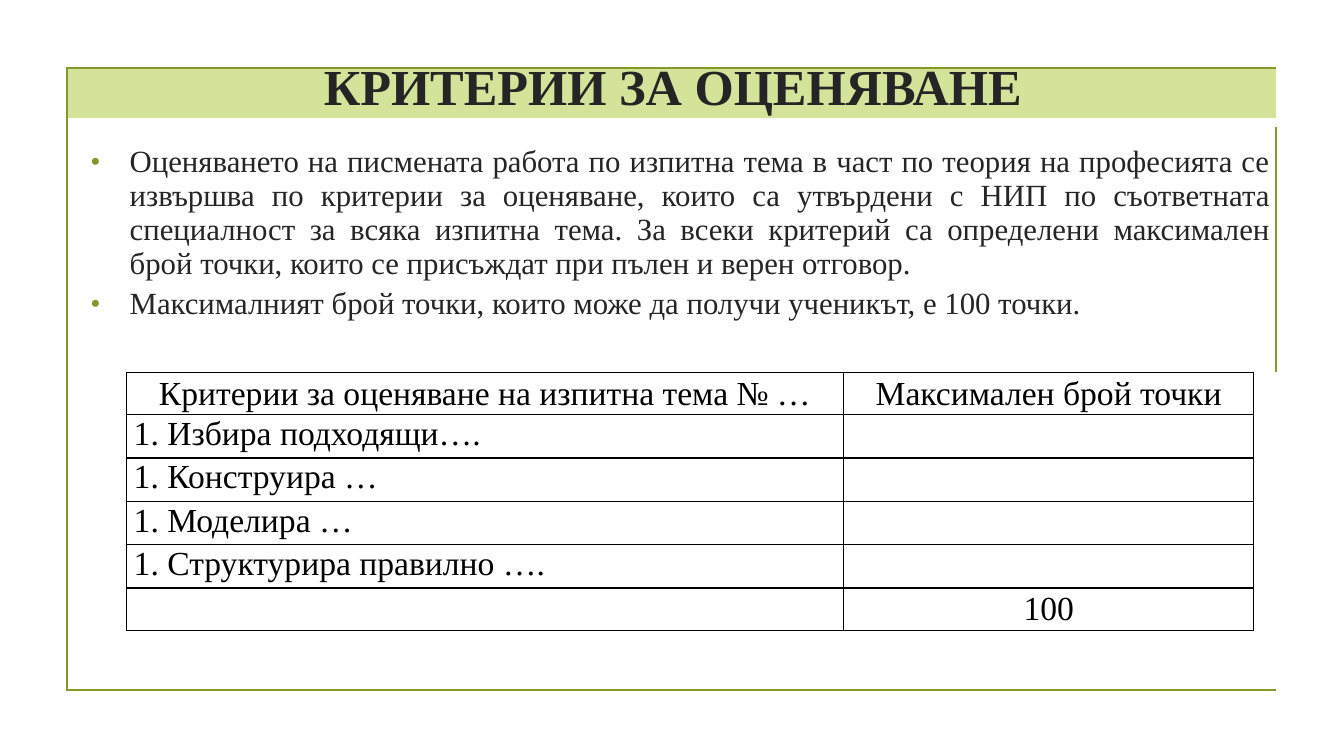
from lxml.etree import SubElement
from pptx import Presentation
from pptx.dml.color import RGBColor
from pptx.enum.text import PP_ALIGN
from pptx.oxml.ns import qn
from pptx.util import Inches, Pt

SLIDE_W, SLIDE_H = Inches(13.33), Inches(7.5)
FRAME_LEFT, FRAME_TOP, FRAME_W, FRAME_H = 0.05, 0.09, 0.9, 0.82
COLUMNS = [0.59, 7.11, 4.07, 0.16, 0.06]
ROWS = [0.5, 0.08, 2.07, 0.37, 0.42, 0.43, 0.43, 0.43, 0.43, 0.42, 0.59]
LAST_ROW, LAST_COLUMN = len(ROWS) - 1, len(COLUMNS) - 1
GRID_ROWS, GRID_COLUMNS = range(4, 10), range(1, 3)
MERGES = [
    ((0, 0), (0, 4)), ((1, 0), (1, 4)), ((2, 0), (2, 3)), ((3, 0), (3, 3)),
    ((4, 0), (9, 0)), ((4, 3), (9, 4)), ((10, 0), (10, 4)),
]
FONT = "Times New Roman"
NO_STYLE = "{2D5ABB26-0587-4C30-8999-92F81FD0307C}"
OLIVE = RGBColor(0x83, 0x99, 0x2A)
LIME = RGBColor(0xD4, 0xE3, 0x9A)
CHARCOAL = RGBColor(0x25, 0x25, 0x25)
BLACK = RGBColor(0, 0, 0)
WHITE = RGBColor(0xFF, 0xFF, 0xFF)

TITLE = "КРИТЕРИИ ЗА ОЦЕНЯВАНЕ"
RULES = [
    "Оценяването на писмената работа по изпитна тема в част по теория на професията се "
    "извършва по критерии за оценяване, които са утвърдени с НИП по съответната "
    "специалност за всяка изпитна тема. За всеки критерий са определени максимален "
    "брой точки, които се присъждат при пълен и верен отговор.",
    "Максималният брой точки, които може да получи ученикът, е 100 точки.",
]
HEADINGS = ["Критерии за оценяване на изпитна тема № …", "Максимален брой точки"]
CRITERIA = [
    "1. Избира подходящи….", "1. Конструира …",
    "1. Моделира …", "1. Структурира правилно ….",
]
TOTAL = "100"


def format_paragraph(paragraph, size, color, bold=False, align=PP_ALIGN.LEFT,
                     line=None, before=None, indent=0, hanging=0):
    paragraph.alignment = align
    if line:
        paragraph.line_spacing = Pt(line)
    if before:
        paragraph.space_before = Pt(before)
    properties = paragraph._p.get_or_add_pPr()
    properties.set("marL", str(Inches(indent)))
    properties.set("indent", str(-Inches(hanging)))
    for run in paragraph.runs:
        run.font.name, run.font.size = FONT, Pt(size)
        run.font.bold, run.font.color.rgb = bold, color


def add_bullet(paragraph):
    properties = paragraph._p.get_or_add_pPr()
    color = SubElement(properties, qn("a:buClr"))
    SubElement(color, qn("a:srgbClr"), val=str(OLIVE))
    SubElement(properties, qn("a:buSzPct"), val="95000")
    SubElement(properties, qn("a:buFont"), typeface=FONT)
    SubElement(properties, qn("a:buChar"), char="•")


def write_cell(cell, text, size=24, color=BLACK, top=0, **layout):
    cell.text_frame.text = text
    cell.margin_top = Inches(top)
    format_paragraph(cell.text_frame.paragraphs[0], size, color, **layout)


def write_rules(cell):
    cell.text_frame.text = "\n".join(RULES)
    cell.margin_top = Inches(0.18)
    for index, paragraph in enumerate(cell.text_frame.paragraphs):
        format_paragraph(paragraph, 22, CHARCOAL, align=PP_ALIGN.JUSTIFY,
                         before=4.1 if index else None, indent=0.62, hanging=0.39)
        add_bullet(paragraph)


def border_cell(cell, row, column):
    in_grid = row in GRID_ROWS and column in GRID_COLUMNS
    beside_grid = row in GRID_ROWS
    sides = {
        "L": (column == 0, in_grid or (beside_grid and column == 3)),
        "R": (column == LAST_COLUMN, in_grid or (beside_grid and column == 0)),
        "T": (row == 0, in_grid),
        "B": (row == LAST_ROW, in_grid),
    }
    for side, (on_frame, on_grid) in sides.items():
        if on_frame or on_grid:
            width, color = (Pt(1.5), OLIVE) if on_frame else (Pt(1), BLACK)
            line = SubElement(cell._tc.get_or_add_tcPr(), qn(f"a:ln{side}"), w=str(width))
            fill = SubElement(line, qn("a:solidFill"))
            SubElement(fill, qn("a:srgbClr"), val=str(color))


def style_cell(cell, row, column):
    cell.margin_left = cell.margin_right = cell.margin_top = cell.margin_bottom = 0
    SubElement(cell.text_frame.paragraphs[0]._p, qn("a:endParaRPr"), sz="400")
    border_cell(cell, row, column)
    cell.fill.solid()
    cell.fill.fore_color.rgb = LIME if row == 0 else WHITE


def add_frame(slide):
    table = slide.shapes.add_table(
        len(ROWS), len(COLUMNS), int(SLIDE_W * FRAME_LEFT), int(SLIDE_H * FRAME_TOP),
        int(SLIDE_W * FRAME_W), int(SLIDE_H * FRAME_H)).table
    table.first_row = table.horz_banding = False
    table._tbl.tblPr.find(qn("a:tableStyleId")).text = NO_STYLE
    for column, width in zip(table.columns, COLUMNS):
        column.width = Inches(width)
    for row, height in zip(table.rows, ROWS):
        row.height = Inches(height)
    for row in range(len(ROWS)):
        for column in range(len(COLUMNS)):
            style_cell(table.cell(row, column), row, column)
    for first, last in MERGES:
        table.cell(*first).merge(table.cell(*last))
    return table


def main():
    presentation = Presentation()
    presentation.slide_width, presentation.slide_height = SLIDE_W, SLIDE_H
    slide = presentation.slides.add_slide(presentation.slide_layouts[6])
    table = add_frame(slide)
    write_cell(table.cell(0, 0), TITLE, 36, CHARCOAL, bold=True,
               align=PP_ALIGN.CENTER, line=34.8, indent=0.03)
    write_rules(table.cell(2, 0))
    criteria_column, points_column = GRID_COLUMNS
    heading_row, total_row = GRID_ROWS[0], GRID_ROWS[-1]
    write_cell(table.cell(heading_row, criteria_column), HEADINGS[0], line=28.6, indent=0.32)
    write_cell(table.cell(heading_row, points_column), HEADINGS[1],
               line=28.6, align=PP_ALIGN.CENTER)
    for row, criterion in enumerate(CRITERIA, heading_row + 1):
        write_cell(table.cell(row, criteria_column), criterion, top=0.01, indent=0.07)
    write_cell(table.cell(total_row, points_column), TOTAL,
               line=28.6, align=PP_ALIGN.CENTER)
    presentation.save("out.pptx")


if __name__ == "__main__":
    main()
